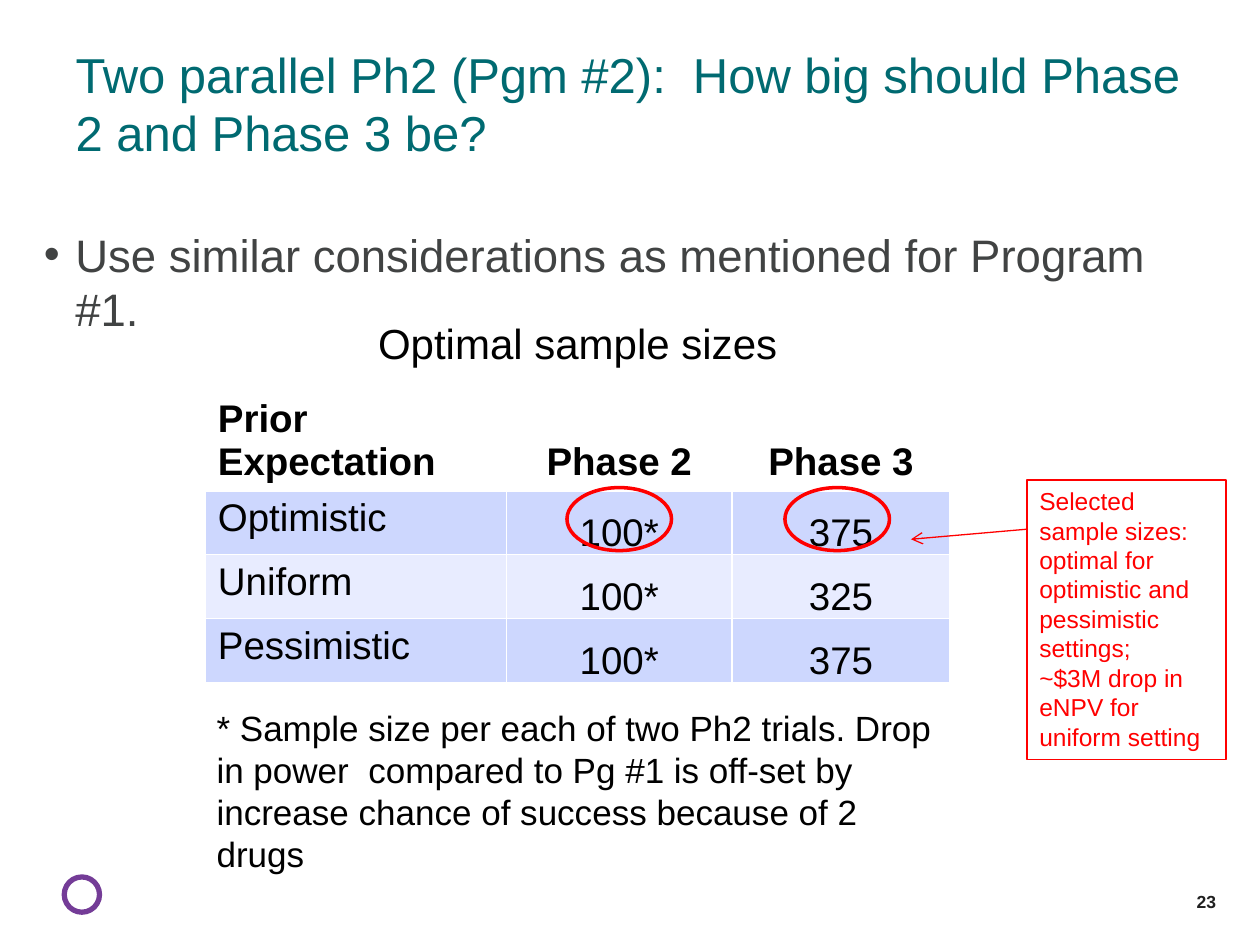
import dataclasses

import lxml.etree
import pptx
import pptx.dml.color
import pptx.enum.shapes
import pptx.enum.text
import pptx.oxml
import pptx.oxml.ns
import pptx.util

Inches = pptx.util.Inches
Pt = pptx.util.Pt
qn = pptx.oxml.ns.qn
ALIGN = pptx.enum.text.PP_ALIGN
ANCHOR = pptx.enum.text.MSO_ANCHOR
SHAPE = pptx.enum.shapes.MSO_SHAPE

BLACK, RED, WHITE, PURPLE = "000000", "FF0000", "FFFFFF", "743C97"
BANDS = ("CDD7FE", "E8ECFF")


@dataclasses.dataclass(frozen=True)
class TextStyle:
    size: float
    color: str = BLACK
    bold: bool = False
    align: ALIGN = ALIGN.LEFT


@dataclasses.dataclass(frozen=True)
class Area:
    left: float
    top: float
    width: float
    height: float

    def lengths(self) -> list:
        return [Inches(value) for value in dataclasses.astuple(self)]


@dataclasses.dataclass(frozen=True)
class SampleSizes:
    prior: str
    phase_2: str
    phase_3: str


def rgb(color: str) -> pptx.dml.color.RGBColor:
    return pptx.dml.color.RGBColor.from_string(color)


def write(frame, text: str, style: TextStyle) -> None:
    frame.text = text
    frame.word_wrap = True
    for para in frame.paragraphs:
        para.alignment = style.align
        for span in para.runs:
            span.font.name = "Arial"
            span.font.size = Pt(style.size)
            span.font.bold = style.bold
            span.font.color.rgb = rgb(style.color)


def add_text(page, area: Area, text: str, style: TextStyle):
    box = page.shapes.add_textbox(*area.lengths())
    write(box.text_frame, text, style)
    return box


def add_outline(page, kind: SHAPE, area: Area, width: float, color: str = RED):
    shape = page.shapes.add_shape(kind, *area.lengths())
    shape.shadow.inherit = False
    shape.fill.background()
    shape.line.color.rgb = rgb(color)
    shape.line.width = Pt(width)
    return shape


def set_bullet(para, indent: float) -> None:
    properties = para._p.get_or_add_pPr()
    properties.set("marL", str(Inches(indent)))
    properties.set("indent", str(-Inches(indent)))
    lxml.etree.SubElement(properties, qn("a:buFont")).set("typeface", "Arial")
    lxml.etree.SubElement(properties, qn("a:buChar")).set("char", "•")


def set_borders(cell, top: float, bottom: float) -> None:
    widths = {"a:lnL": 1, "a:lnR": 1, "a:lnT": top, "a:lnB": bottom}
    for tag, width in widths.items():
        line = lxml.etree.SubElement(cell._tc.get_or_add_tcPr(), qn(tag))
        line.set("w", str(Pt(width)))
        fill = lxml.etree.SubElement(line, qn("a:solidFill"))
        lxml.etree.SubElement(fill, qn("a:srgbClr")).set("val", WHITE)


def add_sample_table(page, area: Area, rows: list[SampleSizes]) -> None:
    table = page.shapes.add_table(len(rows), 3, *area.lengths()).table
    for column, width in zip(table.columns, (2.39, 1.79, 1.73)):
        column.width = Inches(width)
    for r, row in enumerate(rows):
        header = r == 0
        table.rows[r].height = Inches(0.88 if header else 0.51)
        for c, text in enumerate(dataclasses.astuple(row)):
            cell = table.cell(r, c)
            align = ALIGN.CENTER if c else ALIGN.LEFT
            write(cell.text_frame, text, TextStyle(22, bold=header, align=align))
            cell.vertical_anchor = ANCHOR.BOTTOM if header or c else ANCHOR.TOP
            set_borders(cell, top=3 if r == 1 else 1, bottom=3 if header else 1)
            if header:
                cell.fill.background()
                continue
            cell.fill.solid()
            cell.fill.fore_color.rgb = rgb(BANDS[(r - 1) % 2])
            if c:
                cell.margin_left = cell.margin_right = cell.margin_top = Inches(0.01)
                cell.margin_bottom = 0


def add_arrow(page, start: tuple[float, float], end: tuple[float, float]) -> None:
    arrow = page.shapes.add_connector(
        pptx.enum.shapes.MSO_CONNECTOR.STRAIGHT, *map(Inches, start + end))
    arrow.line.color.rgb = rgb(RED)
    arrow.line.width = Pt(0.75)
    lxml.etree.SubElement(arrow.line._get_or_add_ln(), qn("a:tailEnd")).set("type", "arrow")
    lxml.etree.SubElement(arrow._element.spPr, qn("a:effectLst"))


def main() -> None:
    deck = pptx.Presentation()
    deck.slide_width, deck.slide_height = Inches(10), Inches(7.5)
    page = deck.slides.add_slide(deck.slide_layouts[5])

    # Title
    title = page.shapes.title
    title.left, title.top, title.width, title.height = Area(0.5, 0.3, 9, 1.25).lengths()
    write(title.text_frame,
          "Two parallel Ph2 (Pgm #2):  How big should Phase 2 and Phase 3 be?",
          TextStyle(28, "006A71"))
    title.text_frame.vertical_anchor = ANCHOR.TOP
    title.text_frame.auto_size = pptx.enum.text.MSO_AUTO_SIZE.NONE

    # Bullet
    bullet = add_text(page, Area(0.25, 1.75, 9.33, 0.92),
                      "Use similar considerations as mentioned for Program #1.",
                      TextStyle(26, "414343"))
    set_bullet(bullet.text_frame.paragraphs[0], 0.25)

    # Table with its heading and footnote
    add_sample_table(page, Area(1.63, 3.01, 5.91, 2.41), [
        SampleSizes("Prior  Expectation", "Phase 2", "Phase 3"),
        SampleSizes("Optimistic", "100*", "375"),
        SampleSizes("Uniform", "100*", "325"),
        SampleSizes("Pessimistic", "100*", "375"),
    ])
    add_text(page, Area(1.67, 2.47, 5.83, 0.67), "Optimal sample sizes",
             TextStyle(24, align=ALIGN.CENTER))
    add_text(page, Area(1.62, 5.56, 5.92, 1.11),
             "* Sample size per each of two Ph2 trials. Drop in power  compared to Pg #1 "
             "is off-set by increase chance of success because of 2 drugs", TextStyle(20))

    # Selected sizes and their explanation
    for left in (4.5, 6.23):
        add_outline(page, SHAPE.OVAL, Area(left, 3.87, 0.83, 0.5), 2)
    callout = add_outline(page, SHAPE.RECTANGLE, Area(8.15, 3.81, 1.58, 2.22), 0.75)
    write(callout.text_frame,
          "Selected sample sizes: optimal for optimistic and pessimistic settings; "
          "\v~$3M drop in eNPV for uniform setting", TextStyle(14, RED))
    callout.text_frame.vertical_anchor = ANCHOR.TOP
    add_arrow(page, (8.15, 4.2), (7.23, 4.28))

    # Footer mark and page number
    add_outline(page, SHAPE.OVAL, Area(0.51, 6.96, 0.28, 0.28), 3, PURPLE)
    number = add_text(page, Area(8.92, 7.03, 0.83, 0.25), "23",
                      TextStyle(10, "212121", bold=True, align=ALIGN.RIGHT))
    number.text_frame.vertical_anchor = ANCHOR.MIDDLE

    deck.save("out.pptx")


if __name__ == "__main__":
    main()
